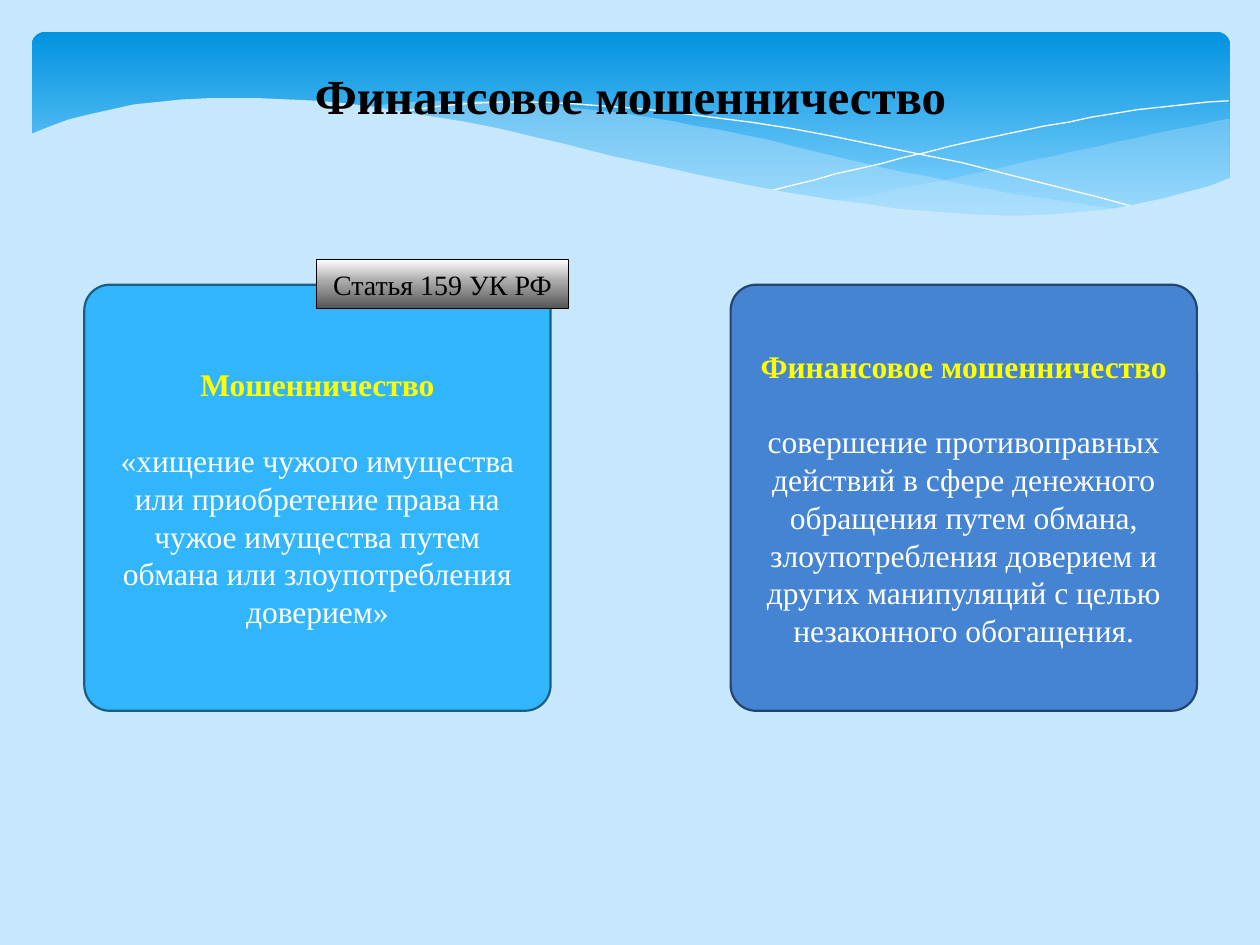
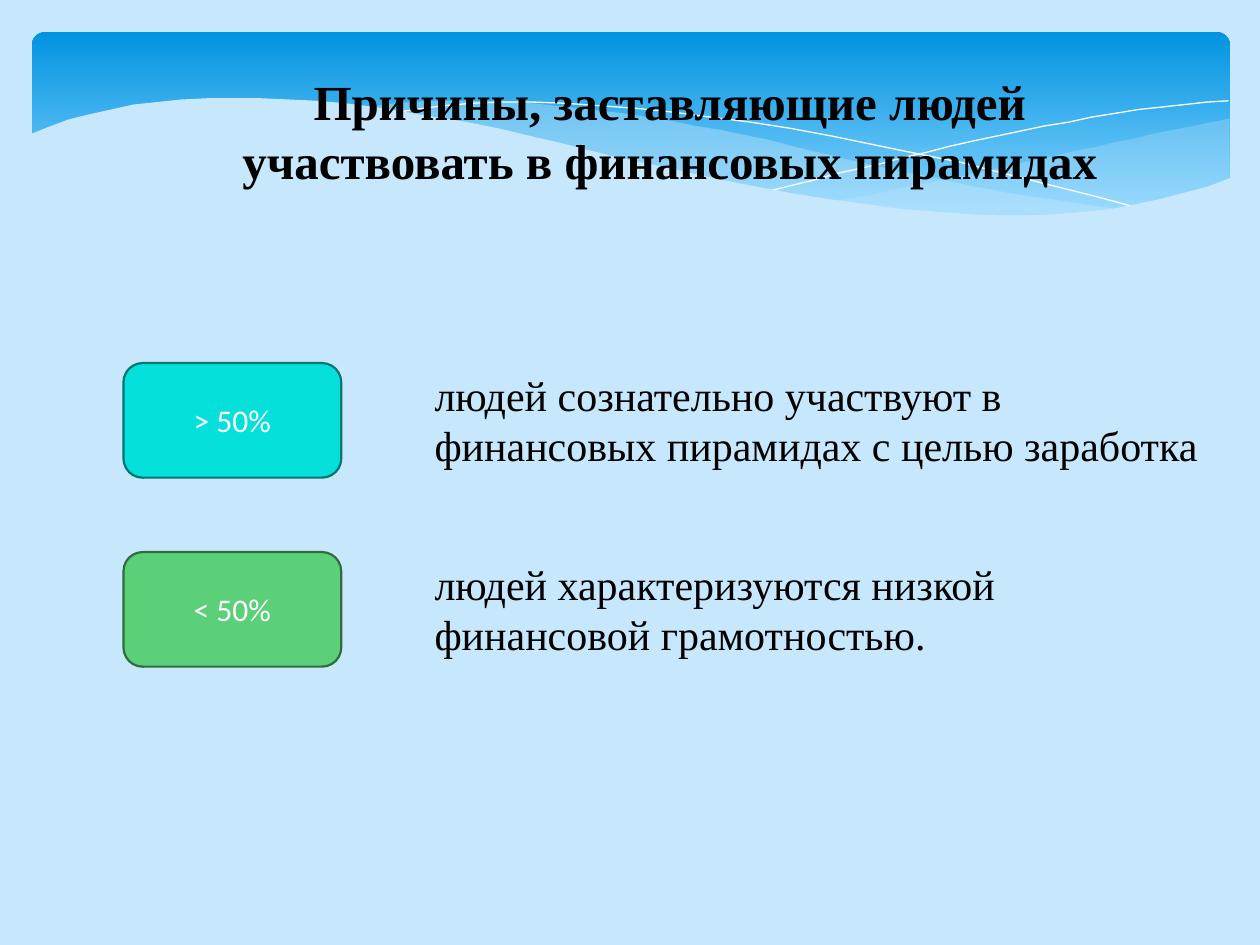
from copy import deepcopy

from lxml import etree
from pptx import Presentation
from pptx.dml.color import RGBColor
from pptx.enum.shapes import MSO_SHAPE
from pptx.enum.text import MSO_ANCHOR, MSO_AUTO_SIZE, PP_ALIGN
from pptx.oxml.ns import qn
from pptx.util import Cm, Pt

COLORS = {
    "background": "C6E7FC", "band_top": "0293E0", "band_bottom": "83D3FE",
    "white": "FFFFFF", "black": "000000", "heading": "FFFF00",
    "sky": "31B6FD", "sky_line": "195F84", "blue": "4584D3", "blue_line": "24456E",
    "cyan": "05E0DB", "cyan_line": "037572", "green": "5BD078", "green_line": "2F6D3F",
    "tag_middle": "ABABAB", "tag_bottom": "545454",
}
RGB = {name: RGBColor.from_string(value) for name, value in COLORS.items()}
SERIF = "Times New Roman"
WAVE_UNIT = Cm(0.0254)  # wave points are in hundredths of an inch
CURVE_STEPS = 20


def add_box(slide, kind, left, top, width, height, fill, line):
    """Add a preset shape in centimetres; fill is a colour name or (percent, name) stops."""
    shape = slide.shapes.add_shape(kind, Cm(left), Cm(top), Cm(width), Cm(height))
    shape.shadow.inherit = False
    if isinstance(fill, str):
        shape.fill.solid()
        shape.fill.fore_color.rgb = RGB[fill]
    else:
        shape.fill.gradient()
        shape.fill.gradient_angle = 270
        stop_list = shape.element.spPr.find(qn("a:gradFill")).find(qn("a:gsLst"))
        for _ in fill[2:]:
            stop_list.append(deepcopy(stop_list[0]))
        for stop, (percent, name) in zip(shape.fill.gradient_stops, fill):
            stop.position = percent / 100
            stop.color.rgb = RGB[name]
    if line:
        shape.line.color.rgb = RGB[line]
        shape.line.width = Pt(1.25)
    else:
        shape.line.fill.background()
    shape.text_frame.word_wrap = True
    shape.text_frame.vertical_anchor = MSO_ANCHOR.MIDDLE
    return shape


def write_paragraph(paragraph, text, size, color, font=SERIF, bold=False,
                    align=PP_ALIGN.CENTER):
    paragraph.text = text
    paragraph.alignment = align
    paragraph.font.name = font
    paragraph.font.size = Pt(size)
    paragraph.font.bold = bold
    paragraph.font.color.rgb = RGB[color]


presentation = Presentation()
presentation.slide_width = Cm(25.4)
presentation.slide_height = Cm(19.05)
presentation.slide_master.background.fill.solid()
presentation.slide_master.background.fill.fore_color.rgb = RGB["background"]
layout = presentation.slide_layouts[5]

# Slides and their titles: text, left, top, width, height
titles = [
    ("Финансовое мошенничество", 5.56, 1.19, 14.3, 1.45),
    ("Причины, заставляющие людей участвовать в финансовых пирамидах",
     3.3, 1.32, 20.4, 2.64),
]
slides = []
for text, left, top, width, height in titles:
    slide = presentation.slides.add_slide(layout)
    title = slide.shapes.title
    title.left, title.top, title.width, title.height = map(Cm, (left, top, width, height))
    title.text_frame.word_wrap = True
    title.text_frame.auto_size = MSO_AUTO_SIZE.NONE
    title.text_frame.vertical_anchor = MSO_ANCHOR.TOP
    write_paragraph(title.text_frame.paragraphs[0], text, 28, "black", bold=True)
    slides.append(slide)
fraud_slide, reasons_slide = slides

# Header band: a gradient panel covered by waves, back to front.
# A wave is a start point, then cubic Bézier curves of (control, control, end).
band = [add_box(fraud_slide, MSO_SHAPE.ROUNDED_RECTANGLE, 0.64, 0.64, 24.16, 3.96,
                [(0, "band_top"), (90, "band_bottom")], None)]
band[0].adjustments[0] = 0.07

right_wave = ((976, 94), [
    ((880, 112), (760, 143), (661, 160)),
    ((770, 177), (885, 181), (976, 141)),
])
middle_wave = ((893, 167), [
    ((805, 156), (710, 136), (629, 116)),
    ((500, 85), (370, 71), (286, 86)),
    ((340, 91), (396, 103), (449, 116)),
    ((581, 149), (752, 188), (893, 167)),
])
falling_line = ((309, 90), [((440, 64), (660, 98), (907, 166))])
rising_line = ((613, 151), [((720, 124), (860, 87), (975, 80))])
front_wave = ((977, 141), [
    ((858, 187), (715, 181), (447, 114)),
    ((275, 71), (120, 63), (23, 107)),
])
front_corners = [(23, 224), (977, 224)]

# Wave, straight corners after its curves, fill opacity in percent (None: white line)
waves = [
    (right_wave, [], 29),
    (middle_wave, [], 40),
    (falling_line, [], None),
    (rising_line, [], None),
    (front_wave, front_corners, 100),
]
for (start, curves), corners, opacity in waves:
    points = [start]
    for control_1, control_2, end in curves:
        knots = list(zip(points[-1], control_1, control_2, end))
        for step in range(1, CURVE_STEPS + 1):
            t = step / CURVE_STEPS
            weights = ((1 - t) ** 3, 3 * t * (1 - t) ** 2, 3 * t ** 2 * (1 - t), t ** 3)
            points.append(tuple(
                sum(weight * value for weight, value in zip(weights, axis))
                for axis in knots))
    builder = fraud_slide.shapes.build_freeform(*start, scale=WAVE_UNIT)
    builder.add_line_segments(points[1:] + corners, close=opacity is not None)
    wave = builder.convert_to_shape()
    wave.shadow.inherit = False
    if opacity is None:
        wave.fill.background()
        wave.line.color.rgb = RGB["white"]
        wave.line.width = Pt(0)
    else:
        wave.fill.solid()
        wave.fill.fore_color.rgb = RGB["background"]
        wave.line.fill.background()
        if opacity < 100:
            color = wave.element.spPr.find(qn("a:solidFill"))[0]
            etree.SubElement(color, qn("a:alpha")).set("val", str(opacity * 1000))
    band.append(wave)

# Move the band to the layout, so that both slides share it
for number, shape in enumerate(band, start=100):
    shape.element.nvSpPr.cNvPr.set("id", str(number))
    layout.shapes.element.insert_element_before(shape.element, "p:extLst")

# Slide 1: two definitions
definitions = [
    (1.7, "sky", "Мошенничество",
     "«хищение чужого имущества или приобретение права на чужое имущества путем "
     "обмана или злоупотребления доверием»"),
    (14.73, "blue", "Финансовое мошенничество",
     "совершение противоправных действий в сфере денежного обращения путем обмана, "
     "злоупотребления доверием и других манипуляций с целью незаконного обогащения."),
]
for left, color, term, meaning in definitions:
    card = add_box(fraud_slide, MSO_SHAPE.ROUNDED_RECTANGLE, left, 5.74, 9.4, 8.59,
                   color, color + "_line")
    card.adjustments[0] = 0.06
    write_paragraph(card.text_frame.paragraphs[0], term, 18, "heading", bold=True)
    paragraph = card.text_frame.add_paragraph()
    write_paragraph(paragraph, meaning, 18, "white")
    paragraph.space_before = Pt(21.6)

article_tag = add_box(fraud_slide, MSO_SHAPE.RECTANGLE, 6.38, 5.23, 5.08, 0.99,
                      [(0, "white"), (44, "tag_middle"), (100, "tag_bottom")], "black")
article_tag.line.width = Pt(0.75)
write_paragraph(article_tag.text_frame.paragraphs[0], "Статья 159 УК РФ", 16, "black")

# Slide 2: share of people and their reason
first_row_top, row_step, row_height = 7.32, 3.81, 2.31
reasons = [
    ("> 50%", "cyan", "людей сознательно участвуют в финансовых пирамидах с целью заработка"),
    ("< 50%", "green", "людей характеризуются низкой финансовой грамотностью."),
]
for row, (share, color, reason) in enumerate(reasons):
    top = first_row_top + row * row_step
    share_box = add_box(reasons_slide, MSO_SHAPE.ROUNDED_RECTANGLE, 2.49, top, 4.39,
                        row_height, color, color + "_line")
    write_paragraph(share_box.text_frame.paragraphs[0], share, 18, "white", font="Calibri")
    reason_box = reasons_slide.shapes.add_textbox(Cm(8.51), Cm(top), Cm(16), Cm(row_height))
    reason_box.text_frame.word_wrap = True
    write_paragraph(reason_box.text_frame.paragraphs[0], reason, 24, "black",
                    align=PP_ALIGN.LEFT)

presentation.save("out.pptx")
